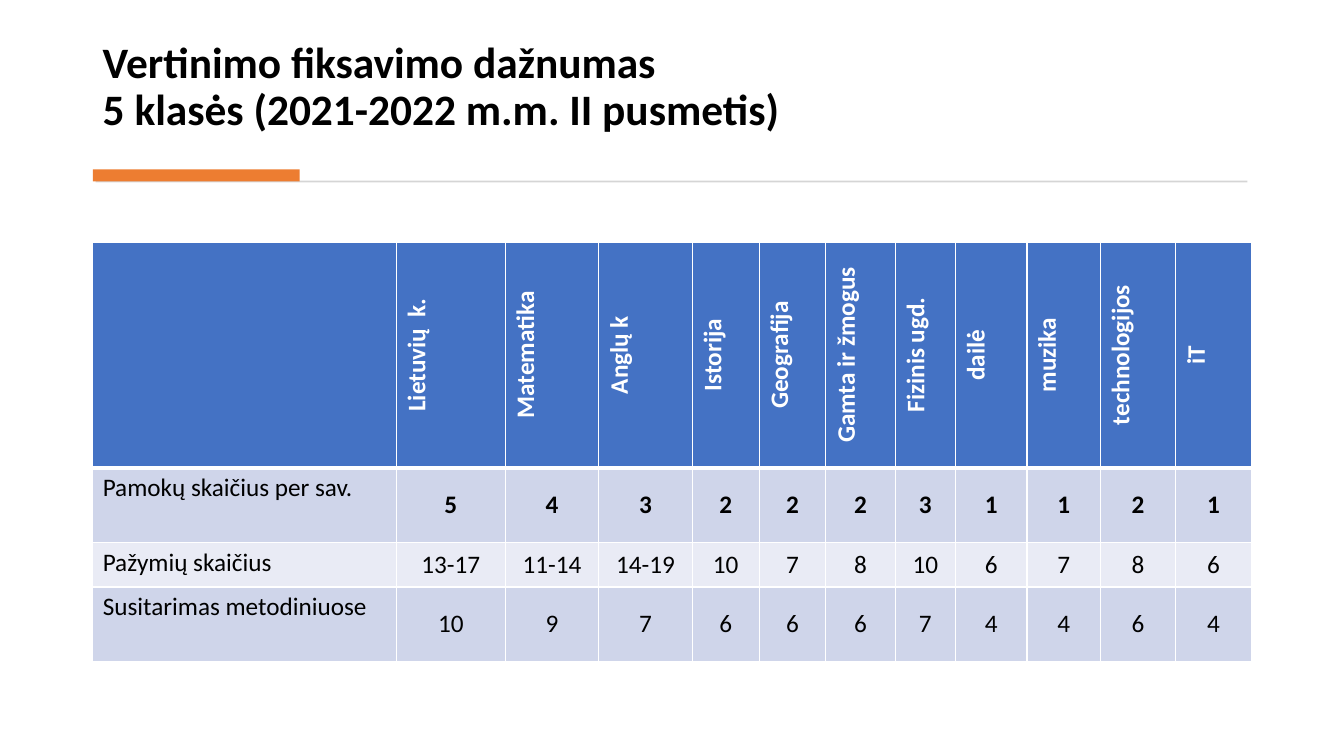
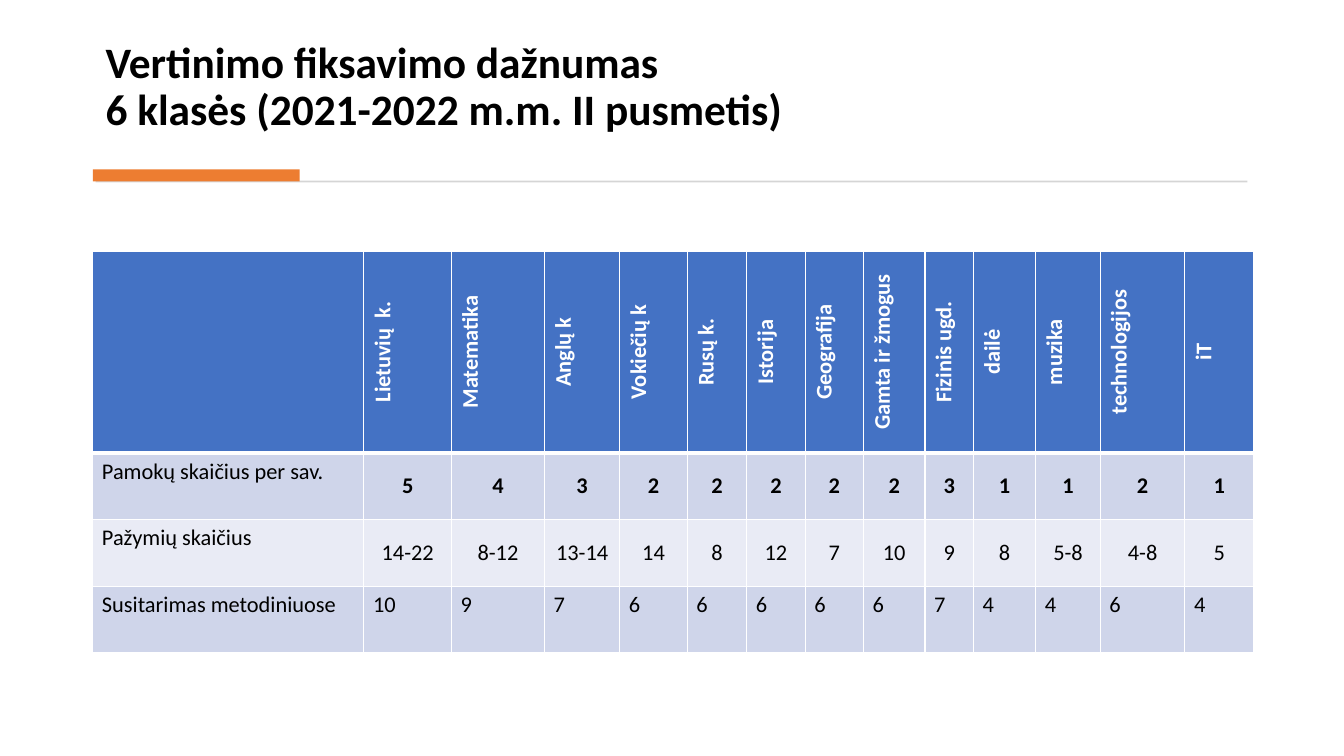
"""Two slides with tables of how often grades are recorded in classes 5 and 6."""
from lxml import etree
from pptx import Presentation
from pptx import util as u
from pptx.dml.color import RGBColor
from pptx.enum import shapes, text
from pptx.oxml.ns import qn

FONT = "Calibri"
BLACK, WHITE = "000000", "FFFFFF"
ACCENT, RULE = "ED7D31", "D5D5D5"
HEADER, BAND_DARK, BAND_LIGHT = "4472C4", "CFD5EA", "E9EBF5"
LEFT = 2.34
THIN, THICK = 1, 3

LANGUAGES = ["Lietuvių  k.", "Matematika", "Anglų k"]
EXTRA_LANGUAGES = ["Vokiečių k", "Rusų k."]
OTHER_SUBJECTS = ["Istorija", "Geografija", "Gamta ir žmogus", "Fizinis ugd.",
                  "dailė", "muzika", "technologijos", "iT"]
LESSONS, GRADES, AGREED = ("Pamokų skaičius per sav.", "Pažymių skaičius",
                           "Susitarimas metodiniuose")

CLASSES = [
    {
        "name": "5", "title_left": LEFT, "top": 6.1, "size": 18, "margin": 0.25,
        "widths": [7.65, 2.74, 2.36, 2.36, 1.68, 1.68, 1.75, 1.52, 1.8, 1.85, 1.9, 1.9],
        "heights": [5.69, 1.88, 1.12, 1.88],
        "agreed_centred": True,
        "rows": [
            ["", *LANGUAGES, *OTHER_SUBJECTS],
            [LESSONS, *"5 4 3 2 2 2 3 1 1 2 1".split()],
            [GRADES, *"13-17 11-14 14-19 10 7 8 10 6 7 8 6".split()],
            [AGREED, *"10 9 7 6 6 6 7 4 4 6 4".split()],
        ],
    },
    {
        "name": "6", "title_left": 2.41, "top": 6.33, "size": 16, "margin": 0.23,
        "widths": [6.83, 2.21, 2.34, 1.9, 1.7, 1.5, 1.47, 1.47, 1.55, 1.22, 1.57,
                   1.63, 2.13, 1.73],
        "heights": [5.08, 1.68, 1.68, 1.68],
        "agreed_centred": False,
        "rows": [
            ["", *LANGUAGES, *EXTRA_LANGUAGES, *OTHER_SUBJECTS],
            [LESSONS, *"5 4 3 2 2 2 2 2 3 1 1 2 1".split()],
            [GRADES, *"14-22 8-12 13-14 14 8 12 7 10 9 8 5-8 4-8 5".split()],
            [AGREED, *"10 9 7 6 6 6 6 6 7 4 4 6 4".split()],
        ],
    },
]


def rgb(value):
    return RGBColor.from_string(value)


def format_runs(paragraph, size, color, bold):
    for run in paragraph.runs:
        run.font.name = FONT
        run.font.size = u.Pt(size)
        run.font.bold = bold
        run.font.color.rgb = rgb(color)


def add_title(slide, class_name, left):
    box = slide.shapes.add_textbox(u.Cm(left), u.Cm(0.71), u.Cm(29.18), u.Cm(2.82))
    frame = box.text_frame
    frame.word_wrap = True
    frame.vertical_anchor = text.MSO_ANCHOR.BOTTOM
    heading = frame.paragraphs[0]
    heading.text = f"Vertinimo fiksavimo dažnumas\v{class_name} klasės (2021-2022 m.m. II pusmetis)"
    heading.line_spacing = 0.9
    format_runs(heading, 31, BLACK, True)


def add_bar(slide, left, top, width, height, color):
    bar = slide.shapes.add_shape(shapes.MSO_SHAPE.RECTANGLE,
                                 u.Cm(left), u.Cm(top), u.Cm(width), u.Cm(height))
    bar.shadow.inherit = False
    bar.fill.solid()
    bar.fill.fore_color.rgb = rgb(color)
    bar.line.fill.background()


def set_borders(cell, top, bottom):
    properties = cell._tc.get_or_add_tcPr()
    for side, points in (("L", THIN), ("R", THIN), ("T", top), ("B", bottom)):
        line = etree.SubElement(properties, qn(f"a:ln{side}"), w=str(u.Pt(points)))
        fill = etree.SubElement(line, qn("a:solidFill"))
        etree.SubElement(fill, qn("a:srgbClr"), val=WHITE)


def style_cell(cell, row, column, group):
    is_header = row == 0
    set_borders(cell, THICK if row == 1 else THIN, THICK if is_header else THIN)
    cell.fill.solid()
    cell.fill.fore_color.rgb = rgb(HEADER if is_header else BAND_DARK if row % 2 else BAND_LIGHT)
    cell.margin_left = cell.margin_right = u.Cm(group["margin"])
    paragraph = cell.text_frame.paragraphs[0]
    if column and (row < 3 or group["agreed_centred"]):
        cell.vertical_anchor = text.MSO_ANCHOR.MIDDLE
        paragraph.alignment = text.PP_ALIGN.CENTER
    if is_header and column:
        cell._tc.get_or_add_tcPr().set("vert", "vert270")
    format_runs(paragraph, group["size"], WHITE if is_header else BLACK,
                is_header or (row == 1 and column > 0))


def add_grade_table(slide, group):
    widths, heights, rows = group["widths"], group["heights"], group["rows"]
    table = slide.shapes.add_table(len(rows), len(widths), u.Cm(LEFT), u.Cm(group["top"]),
                                   u.Cm(sum(widths)), u.Cm(sum(heights))).table
    for column, width in zip(table.columns, widths):
        column.width = u.Cm(width)
    for row, (height, values) in enumerate(zip(heights, rows)):
        table.rows[row].height = u.Cm(height)
        for column, value in enumerate(values):
            cell = table.cell(row, column)
            cell.text_frame.text = value
            style_cell(cell, row, column, group)


def add_class_slide(deck, group):
    slide = deck.slides.add_slide(deck.slide_layouts[6])
    add_title(slide, group["name"], group["title_left"])
    add_bar(slide, 2.41, 4.55, 29.03, 0.05, RULE)
    add_bar(slide, LEFT, 4.27, 5.21, 0.3, ACCENT)
    add_grade_table(slide, group)


def main():
    deck = Presentation()
    deck.slide_width, deck.slide_height = u.Cm(33.87), u.Cm(19.05)
    for group in CLASSES:
        add_class_slide(deck, group)
    deck.save("out.pptx")


if __name__ == "__main__":
    main()
